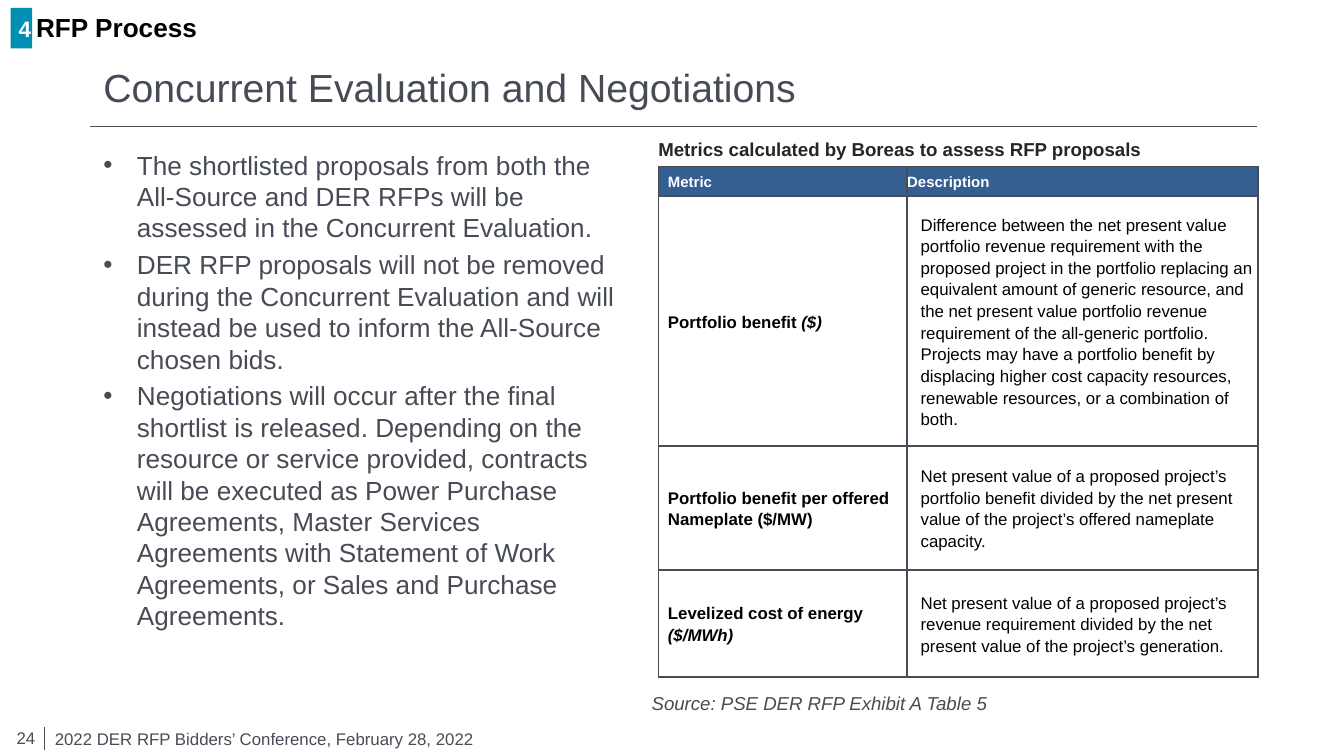
from dataclasses import dataclass

from lxml import etree
from pptx import Presentation
from pptx import util as u
from pptx.dml.color import RGBColor
from pptx.enum import shapes, text
from pptx.oxml.ns import qn


@dataclass(frozen=True)
class Theme:
    font: str = "Arial"
    slate: str = "474B55"
    rule: str = "474C55"
    teal: str = "008EB2"
    header: str = "365F91"
    caption: str = "24262A"
    black: str = "000000"
    white: str = "FFFFFF"
    title_size: int = 21
    body_size: int = 14
    badge_size: int = 12
    note_size: int = 10
    small_size: int = 9
    header_size: int = 8


THEME = Theme()
WIDTH = 10
HEIGHT = WIDTH * 9 / 16
LEFT, RIGHT = 0.67, 9.35
COLUMN_WIDTHS = (1.85, 2.61)
ROW_HEIGHTS = (0.22, 1.86, 0.92, 0.8)

BULLETS = (
    "The shortlisted proposals from both the All-Source and DER RFPs will be assessed in the Concurrent Evaluation.",
    "DER RFP proposals will not be removed during the Concurrent Evaluation and will instead be used to inform "
    "the All-Source chosen bids.",
    "Negotiations will occur after the final shortlist is released. Depending on the resource or service provided, "
    "contracts will be executed as Power Purchase Agreements, Master Services Agreements with Statement of Work "
    "Agreements, or Sales and Purchase Agreements.",
)
METRICS = (
    ("Portfolio benefit ", "($)",
     "Difference between the net present value portfolio revenue requirement with the proposed project in the "
     "portfolio replacing an equivalent amount of generic resource, and the net present value portfolio revenue "
     "requirement of the all-generic portfolio. Projects may have a portfolio benefit by displacing higher cost "
     "capacity resources, renewable resources, or a combination of both."),
    ("Portfolio benefit per offered Nameplate ($/MW)", "",
     "Net present value of a proposed project’s portfolio benefit divided by the net present value of the "
     "project’s offered nameplate capacity."),
    ("Levelized cost of energy ", "($/MWh)",
     "Net present value of a proposed project’s revenue requirement divided by the net present value of the "
     "project’s generation."),
)


def style(font, size, color, bold=False, italic=False):
    font.name, font.size = THEME.font, u.Pt(size)
    font.bold, font.italic = bold, italic
    font.color.rgb = RGBColor.from_string(color)


def paint(fill, color):
    fill.solid()
    fill.fore_color.rgb = RGBColor.from_string(color)


def add_text(page, place, lines, size, color, bold=False, italic=False,
             anchor=text.MSO_ANCHOR.TOP, align=text.PP_ALIGN.LEFT):
    box = page.shapes.add_textbox(*map(u.Inches, place))
    frame = box.text_frame
    frame.word_wrap = True
    frame.vertical_anchor = anchor
    frame.text = lines
    for para in frame.paragraphs:
        para.alignment = align
        for span in para.runs:
            style(span.font, size, color, bold, italic)
    return frame


def add_rule(page, start, end):
    rule = page.shapes.add_connector(shapes.MSO_CONNECTOR.STRAIGHT, *map(u.Inches, start + end))
    rule.line.width = u.Pt(0.75)
    rule.line.color.rgb = RGBColor.from_string(THEME.rule)
    etree.SubElement(rule._element.spPr, qn("a:effectLst"))


def add_badge(page, place, number):
    badge = page.shapes.add_shape(shapes.MSO_SHAPE.RECTANGLE, *map(u.Inches, place))
    badge.shadow.inherit = False
    paint(badge.fill, THEME.teal)
    badge.line.fill.background()
    frame = badge.text_frame
    frame.margin_left, frame.margin_right = u.Inches(0.05), 0
    frame.word_wrap = False
    frame.vertical_anchor = text.MSO_ANCHOR.MIDDLE
    frame.text = number
    para = frame.paragraphs[0]
    para.alignment = text.PP_ALIGN.CENTER
    style(para.runs[0].font, THEME.badge_size, THEME.white, bold=True)


def add_bullets(page, place, items):
    frame = add_text(page, place, "\n".join(items), THEME.body_size, THEME.slate)
    for para in frame.paragraphs:
        para.space_after = u.Pt(3)
        props = para._p.get_or_add_pPr()
        props.set("marL", str(u.Inches(0.25)))
        props.set("indent", str(-u.Inches(0.25)))
        etree.SubElement(props, qn("a:buFont"), typeface=THEME.font)
        etree.SubElement(props, qn("a:buChar"), char="•")


def set_borders(cell):
    props = cell._tc.get_or_add_tcPr()
    for index, side in enumerate(("lnL", "lnR", "lnT", "lnB")):
        edge = etree.Element(qn(f"a:{side}"), w=str(u.Pt(1)))
        fill = etree.SubElement(edge, qn("a:solidFill"))
        etree.SubElement(fill, qn("a:srgbClr"), val=THEME.rule)
        props.insert(index, edge)


def fill_cell(cell, spans, size, color, margins=(0, 0), indent=0):
    cell.vertical_anchor = text.MSO_ANCHOR.MIDDLE
    cell.margin_left = cell.margin_right = u.Inches(margins[0])
    cell.margin_top = cell.margin_bottom = u.Inches(margins[1])
    para = cell.text_frame.paragraphs[0]
    para.line_spacing = 1.15
    para._p.get_or_add_pPr().set("marL", str(u.Inches(indent)))
    for words, bold, italic in spans:
        span = para.add_run()
        span.text = words
        style(span.font, size, color, bold, italic)
    set_borders(cell)


def add_metrics(page, left, top):
    place = (left, top, sum(COLUMN_WIDTHS), sum(ROW_HEIGHTS))
    table = page.shapes.add_table(len(ROW_HEIGHTS), len(COLUMN_WIDTHS), *map(u.Inches, place)).table
    for column, width in zip(table.columns, COLUMN_WIDTHS):
        column.width = u.Inches(width)
    for row, height in zip(table.rows, ROW_HEIGHTS):
        row.height = u.Inches(height)
    label_margins = (0.07, 0.03)
    for column, (label, margins) in enumerate((("Metric", label_margins), ("Description", (0, 0)))):
        cell = table.cell(0, column)
        paint(cell.fill, THEME.header)
        fill_cell(cell, [(label, True, False)], THEME.header_size, THEME.white, margins)
    for row, (name, unit, description) in enumerate(METRICS, 1):
        spans = [(name, True, False)] + ([(unit, True, True)] if unit else [])
        for column in range(len(COLUMN_WIDTHS)):
            table.cell(row, column).fill.background()
        fill_cell(table.cell(row, 0), spans, THEME.small_size, THEME.black, label_margins)
        fill_cell(table.cell(row, 1), [(description, False, False)], THEME.small_size, THEME.black, indent=0.1)


def main():
    deck = Presentation()
    deck.slide_width, deck.slide_height = u.Inches(WIDTH), u.Inches(HEIGHT)
    page = deck.slides.add_slide(deck.slide_layouts[6])
    middle = text.MSO_ANCHOR.MIDDLE

    add_rule(page, (LEFT, 0.94), (RIGHT, 0.94))
    add_text(page, (-0.06, 5.32, 0.42, 0.34), "24", THEME.small_size, THEME.rule,
             anchor=middle, align=text.PP_ALIGN.RIGHT)
    add_rule(page, (0.33, 5.41), (0.33, 5.58))
    add_text(page, (0.31, 5.37, 4.84, 0.25), "2022 DER RFP Bidders’ Conference, February 28, 2022",
             THEME.small_size, THEME.rule)

    add_text(page, (LEFT, 0.35, RIGHT - LEFT, 0.59), "Concurrent Evaluation and Negotiations",
             THEME.title_size, THEME.slate, anchor=middle)
    add_bullets(page, (LEFT, 1.06, 4.08, 4.06), BULLETS)
    add_badge(page, (0.08, 0.06, 0.16, 0.3), "4")
    add_text(page, (0.17, 0.08, 2.67, 0.24), "RFP Process", THEME.body_size, THEME.black,
             bold=True, anchor=middle)

    add_metrics(page, 4.9, 1.24)
    add_text(page, (4.8, 0.98, 4.55, 0.27), "Metrics calculated by Boreas to assess RFP proposals",
             THEME.note_size, THEME.caption, bold=True)
    add_text(page, (4.75, 5.1, 3.72, 0.27), "Source: PSE DER RFP Exhibit A Table 5",
             THEME.note_size, THEME.rule, italic=True)
    deck.save("out.pptx")


if __name__ == "__main__":
    main()
